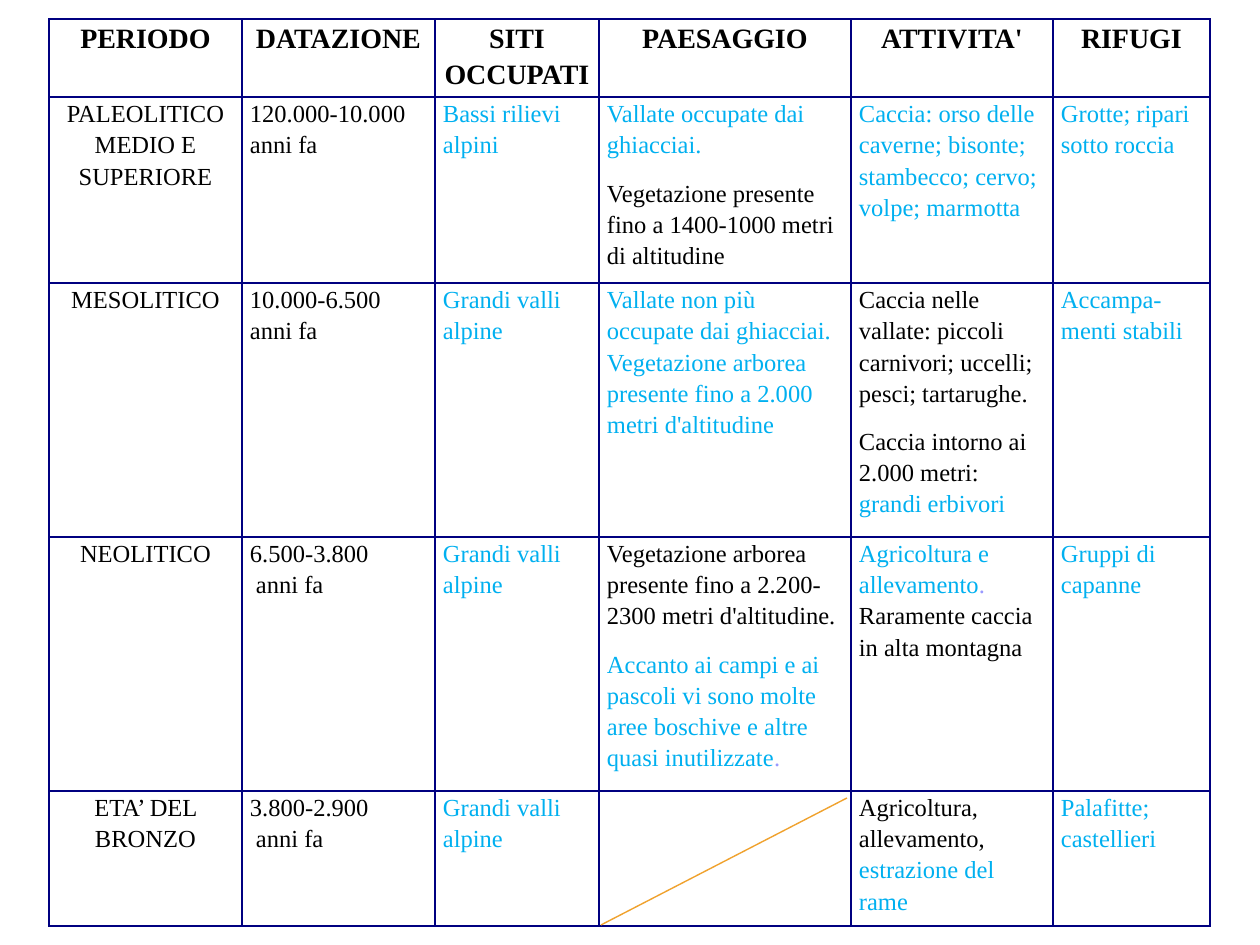
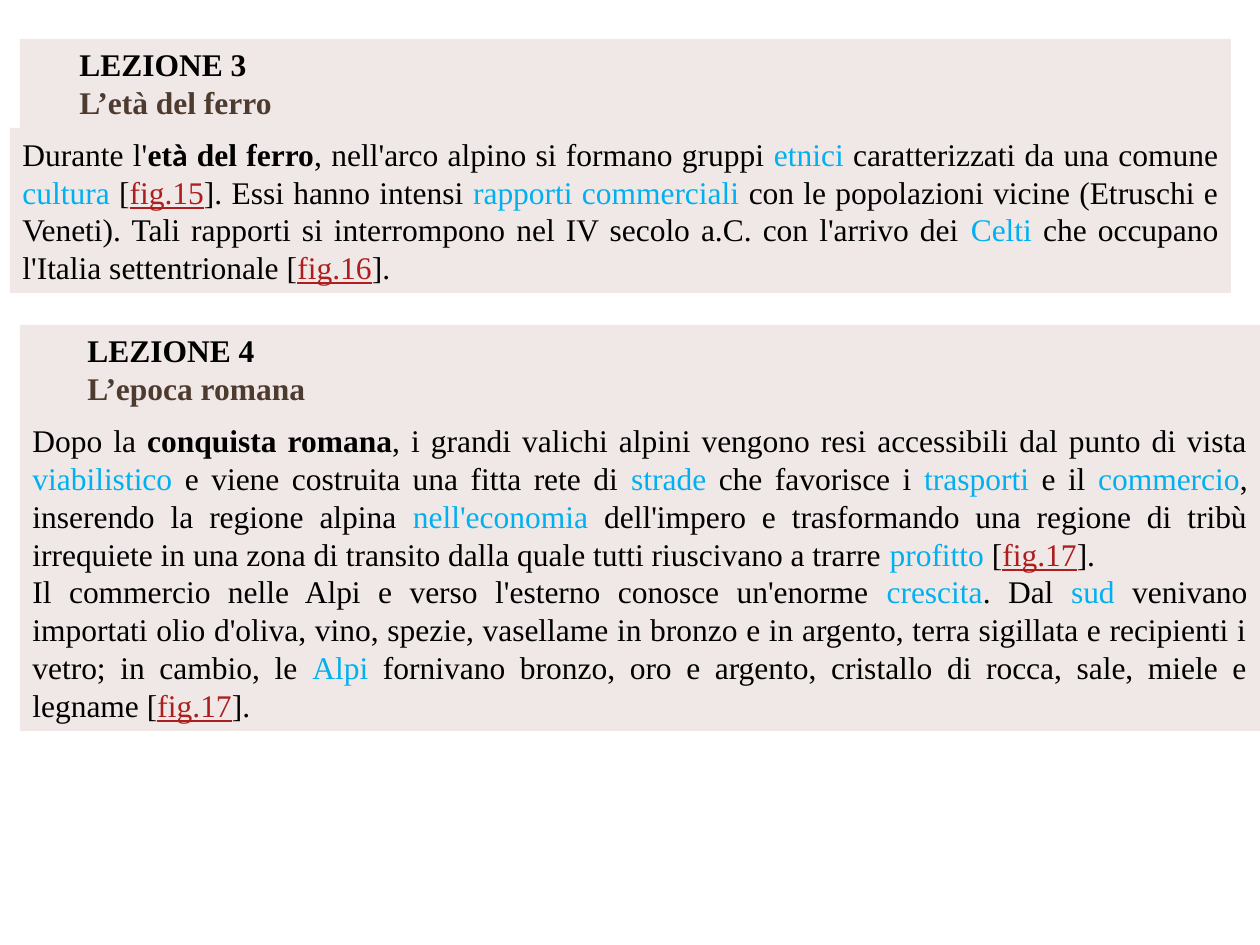
from dataclasses import dataclass

import lxml.etree
import pptx
import pptx.dml.color
import pptx.enum.shapes
import pptx.enum.text
import pptx.oxml.ns
import pptx.util

Align = pptx.enum.text.PP_ALIGN
Anchor = pptx.enum.text.MSO_ANCHOR
qn = pptx.oxml.ns.qn


@dataclass(frozen=True)
class Theme:
    """Colours, fonts and type sizes shared by the slides."""
    black: str = "000000"
    white: str = "FFFFFF"
    blue: str = "00B0F0"
    lilac: str = "9999FF"
    brown: str = "4E3B30"
    red: str = "AD1F1F"
    navy: str = "000080"
    amber: str = "F0A22E"
    panel: str = "F0E8E6"
    font: str = "Times New Roman"
    accent: str = "Calibri"
    head: int = 16
    cell: int = 14
    body: int = 18


THEME = Theme()
MARKS = {
    "^": {"color": THEME.blue},
    "%": {"color": THEME.lilac},
    "_": {"color": THEME.red, "under": True},
    "*": {"bold": True},
    "~": {"bold": True, "font": THEME.accent},
    "#": {"bold": True, "color": THEME.brown},
}

COLS = [193, 193, 164, 252, 202, 157]
ROWS = [78, 186, 254, 254, 135]
DATE_COL = 1
HEADS = ["PERIODO", "DATAZIONE", "SITI OCCUPATI", "PAESAGGIO", "ATTIVITA'", "RIFUGI"]
AGES = [
    ["PALEOLITICO MEDIO E SUPERIORE", "120.000-10.000\nanni fa",
     "^Bassi rilievi alpini",
     "^Vallate occupate dai ghiacciai.\n"
     "Vegetazione presente fino a 1400-1000 metri di altitudine",
     "^Caccia: orso delle caverne; bisonte; stambecco; cervo; volpe; marmotta",
     "^Grotte; ripari sotto roccia"],
    ["MESOLITICO", "10.000-6.500 anni fa", "^Grandi valli alpine",
     "^Vallate non più occupate dai ghiacciai. Vegetazione arborea "
     "presente fino a 2.000 metri d'altitudine",
     "Caccia nelle vallate: piccoli carnivori; uccelli; pesci; tartarughe.\n"
     "Caccia intorno ai 2.000 metri: |^grandi erbivori",
     "^Accampa-menti stabili"],
    ["NEOLITICO", "6.500-3.800\n>anni fa", "^Grandi valli alpine",
     "Vegetazione arborea presente fino a 2.200-2300 metri d'altitudine.\n"
     "^Accanto ai campi e ai pascoli vi sono molte aree boschive "
     "e altre quasi inutilizzate|%.",
     "^Agricoltura e allevamento|%. |Raramente caccia in alta montagna",
     "^Gruppi di capanne"],
    ["ETA’ DEL BRONZO", "3.800-2.900\n>anni fa", "^Grandi valli alpine", "",
     "Agricoltura, allevamento, |^estrazione del rame",
     "^Palafitte; castellieri"],
]

IRON = (
    "Durante l'|*et|~à|* del ferro|, nell'arco alpino si formano gruppi |^etnici"
    "| caratterizzati da una comune |^cultura |[|_fig.15|]. Essi hanno intensi "
    "|^rapporti commerciali| con le popolazioni vicine (Etruschi e Veneti). "
    "Tali rapporti si interrompono nel IV secolo a.C. con l'arrivo dei |^Celti"
    "| che occupano l'Italia settentrionale [|_fig.16|]."
)
ROME = (
    "Dopo la |*conquista romana|, i grandi valichi alpini vengono resi accessibili "
    "dal punto di vista |^viabilistico| e viene costruita una fitta rete di |^strade"
    "| che favorisce i |^trasporti| e il |^commercio|, inserendo la regione alpina "
    "|^nell'economia| dell'impero e trasformando una regione di tribù irrequiete in "
    "una zona di transito dalla quale tutti riuscivano a trarre |^profitto |["
    "|_fig.17|].\n"
    "Il commercio nelle Alpi e verso l'esterno conosce un'enorme |^crescita|. Dal "
    "|^sud| venivano importati olio d'oliva, vino, spezie, vasellame in bronzo e in "
    "argento, terra sigillata e recipienti i vetro; in cambio, le |^Alpi| fornivano "
    "bronzo, oro e argento, cristallo di rocca, sale, miele e legname [|_fig.17|]."
)


def px(count):
    """Turn pixels into EMU."""
    return pptx.util.Emu(round(count * 914400 / 126))


def tint(code):
    """Make a colour from its hex code."""
    return pptx.dml.color.RGBColor.from_string(code)


def style(font, size, color=THEME.black, bold=False, under=False, face=THEME.font):
    """Set every property of a font."""
    font.name, font.size = face, pptx.util.Pt(size)
    font.bold, font.underline = bold, under
    font.color.rgb = tint(color)


def write(frame, text, size, align, lead, gap=0, last=0, bold=False, indent=0):
    """Fill a frame with marked text, one paragraph a line."""
    lines = text.split("\n")
    for spot, line in enumerate(lines):
        para = frame.paragraphs[0] if spot == 0 else frame.add_paragraph()
        shift = 6 if line.startswith(">") else indent
        if shift:
            para._p.get_or_add_pPr().set("marL", str(px(shift)))
        para.alignment, para.line_spacing = align, lead
        para.space_before = pptx.util.Pt(0)
        para.space_after = pptx.util.Pt(last if spot == len(lines) - 1 else gap)
        for part in line.removeprefix(">").split("|"):
            look = {"bold": bold} | MARKS.get(part[:1], {})
            run = para.add_run()
            run.text = part[1:] if part[:1] in MARKS else part
            face = look.pop("font", THEME.font)
            style(run.font, size, face=face, **look)


def edge(cell):
    """Draw the four borders of a cell."""
    props = cell._tc.get_or_add_tcPr()
    for spot, side in enumerate(("a:lnL", "a:lnR", "a:lnT", "a:lnB")):
        line = lxml.etree.Element(qn(side), w="12700")
        fill = lxml.etree.SubElement(line, qn("a:solidFill"))
        lxml.etree.SubElement(fill, qn("a:srgbClr"), val=THEME.navy)
        props.insert(spot, line)


def grid(slide, left, top):
    """Build the table of the ages."""
    rows = [HEADS] + AGES
    table = slide.shapes.add_table(
        len(rows), len(COLS), px(left), px(top), px(sum(COLS)), px(sum(ROWS))).table
    for col, width in zip(table.columns, COLS):
        col.width = px(width)
    for row, height in zip(table.rows, ROWS):
        row.height = px(height)
    for down, texts in enumerate(rows):
        for across, text in enumerate(texts):
            cell = table.cell(down, across)
            cell.margin_left = cell.margin_right = px(8)
            cell.margin_top = cell.margin_bottom = 0
            cell.fill.solid()
            cell.fill.fore_color.rgb = tint(THEME.white)
            edge(cell)
            head = down == 0
            write(cell.text_frame, text, THEME.head if head else THEME.cell,
                  Align.CENTER if head or across == 0 else Align.LEFT, 1.15,
                  gap=0 if across == DATE_COL else 10, last=10, bold=head)


def slash(slide, left, top, width, height):
    """Strike out an empty cell with a rising line."""
    line = slide.shapes.add_connector(
        pptx.enum.shapes.MSO_CONNECTOR.STRAIGHT,
        px(left), px(top + height), px(left + width), px(top))
    line.line.color.rgb = tint(THEME.amber)
    line.line.width = pptx.util.Pt(0.79)
    lxml.etree.SubElement(line._element.spPr, qn("a:effectLst"))


def panel(slide, box, text, anchor=Anchor.TOP, **look):
    """Place a tinted box of justified text."""
    shape = slide.shapes.add_shape(
        pptx.enum.shapes.MSO_SHAPE.RECTANGLE, *map(px, box))
    shape.shadow.inherit = False
    shape.fill.solid()
    shape.fill.fore_color.rgb = tint(THEME.panel)
    shape.line.fill.background()
    frame = shape.text_frame
    frame.word_wrap, frame.vertical_anchor = True, anchor
    write(frame, text, THEME.body, Align.JUSTIFY, 1.0, **look)


def lesson(slide, box, out, title, body, indent):
    """Stack a heading and its body, which starts out px further left."""
    left, top, width, height = box
    head = 89
    panel(slide, (left, top, width, head), title, indent=indent)
    panel(slide, (left - out, top + head, width + out, height - head),
          body, Anchor.MIDDLE)


def main():
    """Build both slides and save them."""
    deck = pptx.Presentation()
    deck.slide_width, deck.slide_height = px(1260), px(945)
    blank = deck.slide_layouts[6]

    ages = deck.slides.add_slide(blank)
    grid(ages, 49, 19)
    slash(ages, 601, 798, 246, 127)

    lessons = deck.slides.add_slide(blank)
    lesson(lessons, (20, 39, 1211, 254), 10,
           "*LEZIONE 3\n#L’età del ferro", IRON, 47)
    lesson(lessons, (20, 325, 1240, 406), 0,
           "*LEZIONE 4\n#L’epoca romana", ROME, 55)

    deck.save("out.pptx")


if __name__ == "__main__":
    main()
